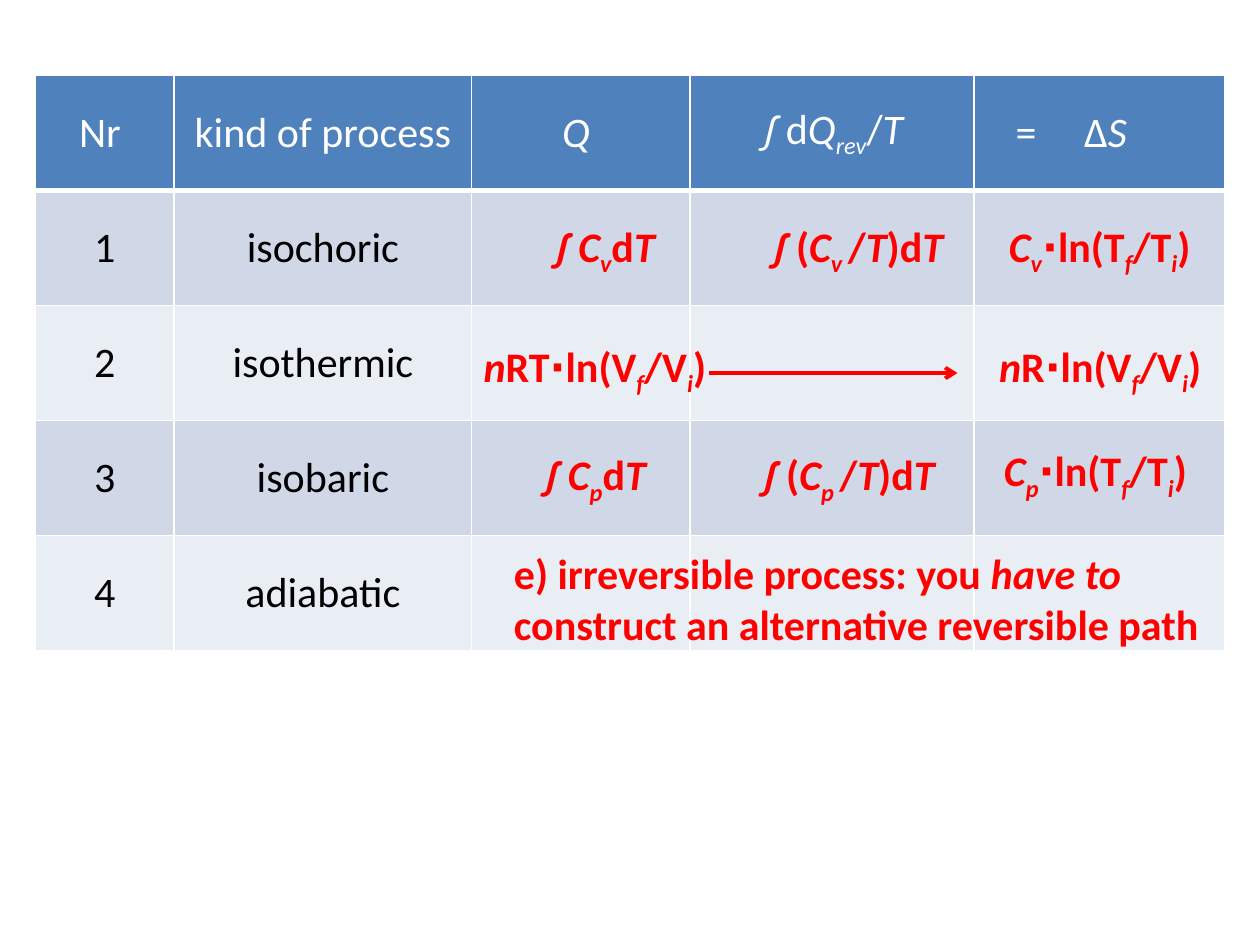
from dataclasses import dataclass

from lxml import etree
from pptx import Presentation
from pptx import util as u
from pptx.dml.color import RGBColor
from pptx.enum import shapes, text
from pptx.oxml import ns


@dataclass(frozen=True)
class Theme:
    font: str = "Calibri"
    size: int = 24
    subscript: int = -25000
    white: str = "FFFFFF"
    black: str = "000000"
    red: str = "FF0000"
    header: str = "4F81BD"
    bands: tuple[str, str] = ("D0D8E8", "E9EDF4")
    border: float = 1
    header_border: float = 3
    arrow: float = 2.25


@dataclass(frozen=True)
class Span:
    words: str
    italic: bool = False
    subscript: bool = False


@dataclass(frozen=True)
class Note:
    left: float
    top: float
    width: float
    height: float
    spans: list[Span]


THEME = Theme()
TABLE_LEFT, TABLE_TOP, ROW_HEIGHT = 0.71, 1.52, 2.32
COLUMN_WIDTHS = (2.8, 6, 4.4, 5.73, 5.05)
DELTA_TABS = (0.58, 1.96)
PROCESSES = ("isochoric", "isothermic", "isobaric", "adiabatic")


def italic(words: str) -> Span:
    return Span(words, italic=True)


def sub(words: str) -> Span:
    return Span(words, italic=True, subscript=True)


def log_ratio(symbol: str) -> list[Span]:
    return [Span(f"∙ln({symbol}"), sub("f"), Span(f"/{symbol}"), sub("i"), Span(")")]


def heat(index: str) -> list[Span]:
    return [italic("∫ C"), sub(index), Span("d"), italic("T")]


def heat_over_temperature(index: str) -> list[Span]:
    return [italic("∫ "), Span("("), italic("C"), sub(f"{index} "), Span("/"),
            italic("T"), Span(")d"), italic("T")]


def entropy(index: str) -> list[Span]:
    return [italic("C"), sub(index), *log_ratio("T")]


def isothermal(factor: str) -> list[Span]:
    return [italic("n"), Span(factor), *log_ratio("V")]


HEADINGS = [
    [Span("Nr ")],
    [Span("kind of process")],
    [italic("Q ")],
    [italic("∫ "), Span("d"), italic("Q"), sub("rev"), Span("/"), italic("T")],
    [Span("\t=\t∆"), italic("S")],
]

NOTES = [
    Note(10.9, 4.32, 3, 1.27, heat("v")),
    Note(15.29, 4.32, 4.2, 1.27, heat_over_temperature("v")),
    Note(20.09, 4.32, 4.7, 1.27, entropy("v")),
    Note(9.5, 6.73, 5.8, 1.27, isothermal("RT")),
    Note(19.89, 6.73, 4.6, 1.27, isothermal("R")),
    Note(10.69, 8.92, 3, 1.27, heat("p")),
    Note(15.09, 8.92, 4.2, 1.27, heat_over_temperature("p")),
    Note(19.99, 8.84, 4.7, 1.27, entropy("p")),
    Note(10.11, 10.92, 14.4, 2.31,
         [Span("e) irreversible process: you "), italic("have to "),
          Span("construct an alternative reversible path")]),
]


def write_spans(para, spans: list[Span], color: str, bold: bool = False) -> None:
    for span in spans:
        run = para.add_run()
        run.text = span.words
        run.font.name = THEME.font
        run.font.size = u.Pt(THEME.size)
        run.font.bold = bold
        run.font.italic = span.italic
        run.font.color.rgb = RGBColor.from_string(color)
        if span.subscript:
            run.font._element.set("baseline", str(THEME.subscript))


def add_tabs(para, positions: tuple[float, ...]) -> None:
    properties = para._p.get_or_add_pPr()
    tabs = etree.SubElement(properties, ns.qn("a:tabLst"))
    for position in positions:
        etree.SubElement(tabs, ns.qn("a:tab"), pos=str(u.Cm(position)), algn="l")


def style_cell(cell, fill: str, bottom: float) -> None:
    properties = cell._tc.get_or_add_tcPr()
    for side in "LRTB":
        width = bottom if side == "B" else THEME.border
        line = etree.SubElement(properties, ns.qn(f"a:ln{side}"), w=str(u.Pt(width)))
        solid = etree.SubElement(line, ns.qn("a:solidFill"))
        etree.SubElement(solid, ns.qn("a:srgbClr"), val=THEME.white)
    cell.fill.solid()
    cell.fill.fore_color.rgb = RGBColor.from_string(fill)
    cell.vertical_anchor = text.MSO_ANCHOR.MIDDLE


def add_process_table(page) -> None:
    body = [[[Span(str(number))], [Span(name)], [], [], []]
            for number, name in enumerate(PROCESSES, 1)]
    rows = [HEADINGS, *body]
    table = page.shapes.add_table(
        len(rows), len(COLUMN_WIDTHS), u.Cm(TABLE_LEFT), u.Cm(TABLE_TOP),
        u.Cm(sum(COLUMN_WIDTHS)), u.Cm(ROW_HEIGHT * len(rows))).table
    for column, width in zip(table.columns, COLUMN_WIDTHS):
        column.width = u.Cm(width)
    for row_index, row in enumerate(rows):
        is_header = row_index == 0
        fill = THEME.header if is_header else THEME.bands[(row_index - 1) % 2]
        color = THEME.white if is_header else THEME.black
        bottom = THEME.header_border if is_header else THEME.border
        for column_index, spans in enumerate(row):
            cell = table.cell(row_index, column_index)
            style_cell(cell, fill, bottom)
            para = cell.text_frame.paragraphs[0]
            para.alignment = text.PP_ALIGN.CENTER
            write_spans(para, spans, color)
    delta_para = table.cell(0, len(COLUMN_WIDTHS) - 1).text_frame.paragraphs[0]
    delta_para.alignment = text.PP_ALIGN.LEFT
    add_tabs(delta_para, DELTA_TABS)


def add_note(page, note: Note) -> None:
    box = page.shapes.add_textbox(u.Cm(note.left), u.Cm(note.top),
                                  u.Cm(note.width), u.Cm(note.height))
    box.text_frame.word_wrap = True
    box.text_frame.auto_size = text.MSO_AUTO_SIZE.SHAPE_TO_FIT_TEXT
    write_spans(box.text_frame.paragraphs[0], note.spans, THEME.red, bold=True)


def add_arrow(page, start: float, end: float, height: float) -> None:
    arrow = page.shapes.add_connector(shapes.MSO_CONNECTOR.STRAIGHT, u.Cm(start),
                                      u.Cm(height), u.Cm(end), u.Cm(height))
    arrow.line.color.rgb = RGBColor.from_string(THEME.red)
    arrow.line.width = u.Pt(THEME.arrow)
    etree.SubElement(arrow.line._get_or_add_ln(), ns.qn("a:tailEnd"), type="arrow")
    etree.SubElement(arrow._element.spPr, ns.qn("a:effectLst"))


def main() -> None:
    deck = Presentation()
    deck.slide_width, deck.slide_height = u.Cm(25.4), u.Cm(19.05)
    page = deck.slides.add_slide(deck.slide_layouts[6])
    add_process_table(page)
    for note in NOTES:
        add_note(page, note)
    add_arrow(page, 14.3, 19.3, 7.52)
    deck.save("out.pptx")


if __name__ == "__main__":
    main()
